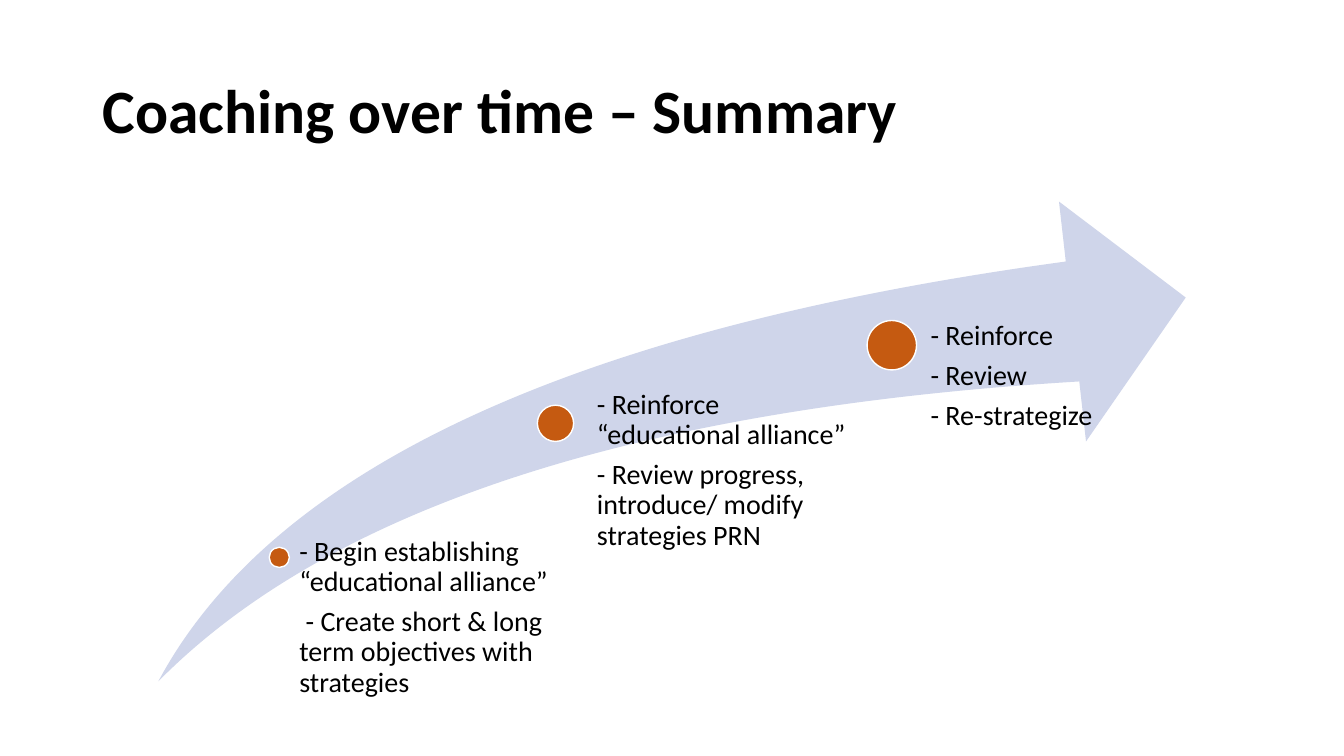
from pptx import Presentation, util as u
from pptx.dml.color import RGBColor
from pptx.enum import shapes as sh, text as tx

STEPS = [
    ((2.67, 5.43, 0.2), (2.87, 5.33, 2.83, 1.38), 0.1,
     ["- Begin establishing “educational alliance”",
      " - Create short & long term objectives with strategies"]),
    ((5.33, 4.02, 0.36), (5.73, 3.87, 2.7, 2.59), 0.19,
     ["- Reinforce “educational alliance”",
      "- Review progress, introduce/ modify strategies PRN"]),
    ((8.6, 3.18, 0.49), (8.97, 3.19, 2.2, 1.89), 0.26,
     ["- Reinforce", "- Review", "- Re-strategize"]),
]


def color(code):
    """Turn a hex string into a colour."""
    return RGBColor.from_string(code)


def style(para, size, bold=False):
    """Set the font and line spacing of a paragraph."""
    font = para.font
    font.name, font.size, font.bold = "Calibri", u.Pt(size), bold
    font.color.rgb = color("000000")
    para.alignment = tx.PP_ALIGN.LEFT
    para.line_spacing = 0.9


def add_title(slide, words):
    """Place and format the title."""
    title = slide.shapes.title
    title.left, title.top = u.Inches(0.92), u.Inches(0.4)
    title.width, title.height = u.Inches(11.5), u.Inches(1.45)
    frame = title.text_frame
    frame.text = words
    frame.auto_size = tx.MSO_AUTO_SIZE.NONE
    frame.vertical_anchor = tx.MSO_ANCHOR.MIDDLE
    style(frame.paragraphs[0], 44, True)


def add_shape(slide, kind, box, fill, line=None):
    """Draw a filled preset shape, with an outline if one is given."""
    shape = slide.shapes.add_shape(kind, *map(u.Inches, box))
    shape.shadow.inherit = False
    shape.fill.solid()
    shape.fill.fore_color.rgb = color(fill)
    if line:
        shape.line.color.rgb = color(line)
        shape.line.width = u.Pt(1)
    else:
        shape.line.fill.background()
    return shape


def add_notes(slide, box, inset, items):
    """Write the points of one step."""
    frame = slide.shapes.add_textbox(*map(u.Inches, box)).text_frame
    frame.word_wrap = True
    frame.margin_left = u.Inches(inset)
    frame.margin_top = frame.margin_right = frame.margin_bottom = 0
    frame.text = "\n".join(items)
    for para in frame.paragraphs:
        style(para, 20)
        para.space_after = u.Pt(7)


def main():
    """Build the slide and save it."""
    deck = Presentation()
    deck.slide_width, deck.slide_height = u.Inches(13.33), u.Inches(7.5)
    slide = deck.slides.add_slide(deck.slide_layouts[5])
    add_title(slide, "Coaching over time – Summary")
    arrow = add_shape(slide, sh.MSO_SHAPE.SWOOSH_ARROW,
                      (1.57, 2, 10.19, 4.76), "CFD5EA")
    arrow.adjustments[0] = arrow.adjustments[1] = 0.25
    for (left, top, size), box, inset, items in STEPS:
        add_shape(slide, sh.MSO_SHAPE.OVAL, (left, top, size, size),
                  "C55A11", "FFFFFF")
        add_notes(slide, box, inset, items)
    deck.save("out.pptx")


if __name__ == "__main__":
    main()
